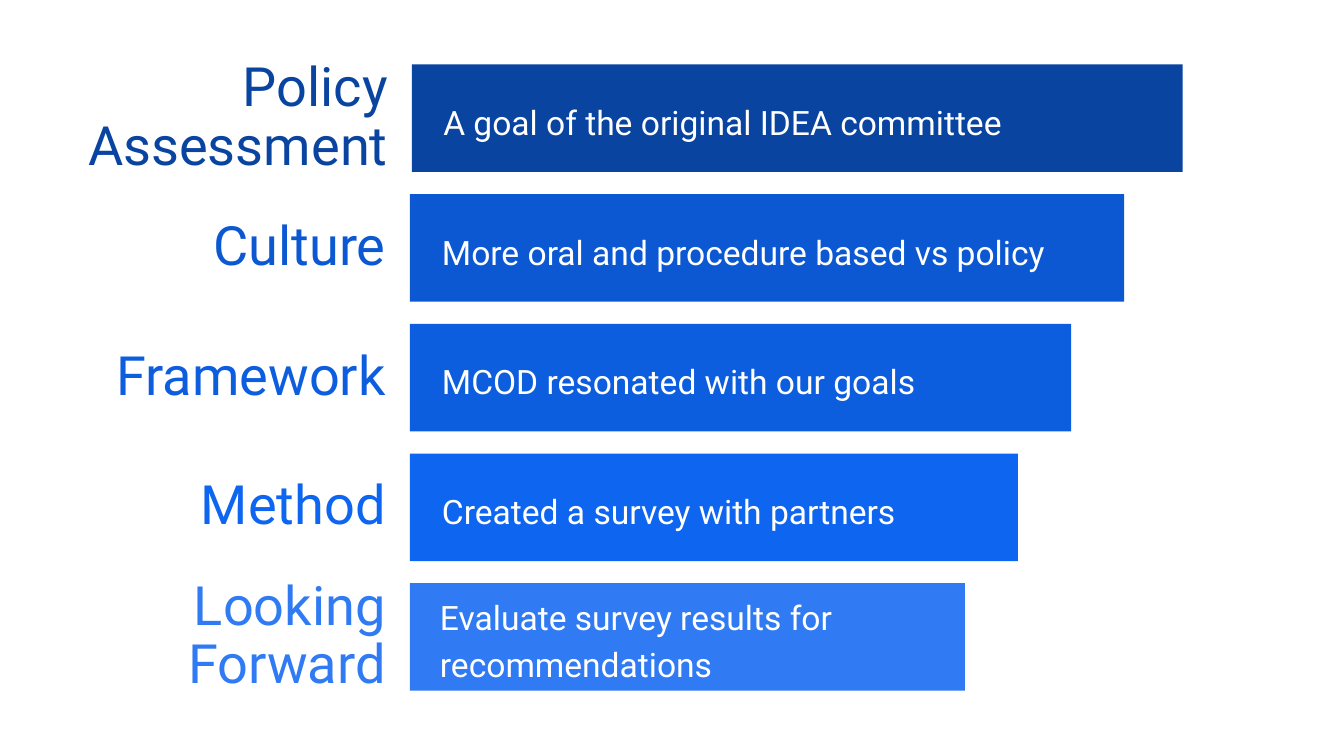
from dataclasses import dataclass

from pptx import Presentation
from pptx.dml.color import RGBColor
from pptx.enum.shapes import MSO_SHAPE
from pptx.enum.text import MSO_ANCHOR, PP_ALIGN
from pptx.util import Pt

EMU_PER_PX = 4572
SLIDE_WIDTH = 2000
SLIDE_HEIGHT = 1125
BAR_HEIGHT = 160
FIRST_BAR_TOP = 96
BAR_PITCH = 193
LABEL_GAP = 16
LABEL_DROP = 11
LABEL_HEIGHT = 138
NOTE_DROP = 45
NOTE_HEIGHT = 72


@dataclass(frozen=True)
class Theme:
    font: str = "Roboto"
    label_size: int = 29
    note_size: int = 18
    note_color: str = "FFFFFF"
    bar_colors: tuple = ("0944A1", "0C58D3", "0D5DDF", "0E65F0", "307BF3")


@dataclass(frozen=True)
class Step:
    label: str
    note: str
    label_left: int
    bar_left: int
    bar_width: int
    note_left: int
    note_width: int


STEPS = [
    Step("Policy Assessment", "A goal of the original IDEA committee", 98, 613, 1147, 640, 1048),
    Step("Culture", "More oral and procedure based vs policy", 120, 610, 1063, 638, 956),
    Step("Framework", "MCOD resonated with our goals", 134, 610, 984, 638, 842),
    Step("Method", "Created a survey with partners", 260, 610, 905, 638, 842),
    Step("Looking Forward", "Evaluate survey results for recommendations", 0, 610, 826, 635, 766),
]


class SlideBuilder:
    def __init__(self, slide, theme):
        self.slide = slide
        self.theme = theme

    def box(self, *lengths):
        return [length * EMU_PER_PX for length in lengths]

    def bar(self, group, left, top, width, height, color):
        shape = group.shapes.add_shape(MSO_SHAPE.RECTANGLE, *self.box(left, top, width, height))
        shape.shadow.inherit = False
        shape.fill.solid()
        shape.fill.fore_color.rgb = RGBColor.from_string(color)
        shape.line.fill.background()

    def text(self, group, left, top, width, height, words, size, color, align, spacing):
        shape = group.shapes.add_textbox(*self.box(left, top, width, height))
        text_frame = shape.text_frame
        text_frame.word_wrap = True
        text_frame.vertical_anchor = MSO_ANCHOR.MIDDLE
        text_frame.text = words
        paragraph = text_frame.paragraphs[0]
        paragraph.alignment = align
        paragraph.line_spacing = spacing
        font = paragraph.runs[0].font
        font.name = self.theme.font
        font.size = Pt(size)
        font.color.rgb = RGBColor.from_string(color)

    def step(self, step, top, color):
        group = self.slide.shapes.add_group_shape()
        label_width = step.bar_left - LABEL_GAP - step.label_left
        self.text(group, step.label_left, top + LABEL_DROP, label_width, LABEL_HEIGHT,
                  step.label, self.theme.label_size, color, PP_ALIGN.RIGHT, 0.9)
        self.bar(group, step.bar_left, top, step.bar_width, BAR_HEIGHT, color)
        self.text(group, step.note_left, top + NOTE_DROP, step.note_width, NOTE_HEIGHT,
                  step.note, self.theme.note_size, self.theme.note_color, PP_ALIGN.LEFT, 1.15)


def main():
    presentation = Presentation()
    presentation.slide_width = SLIDE_WIDTH * EMU_PER_PX
    presentation.slide_height = SLIDE_HEIGHT * EMU_PER_PX
    slide = presentation.slides.add_slide(presentation.slide_layouts[6])
    theme = Theme()
    builder = SlideBuilder(slide, theme)
    for index, (step, color) in enumerate(zip(STEPS, theme.bar_colors)):
        builder.step(step, FIRST_BAR_TOP + BAR_PITCH * index, color)
    presentation.save("out.pptx")


if __name__ == "__main__":
    main()
